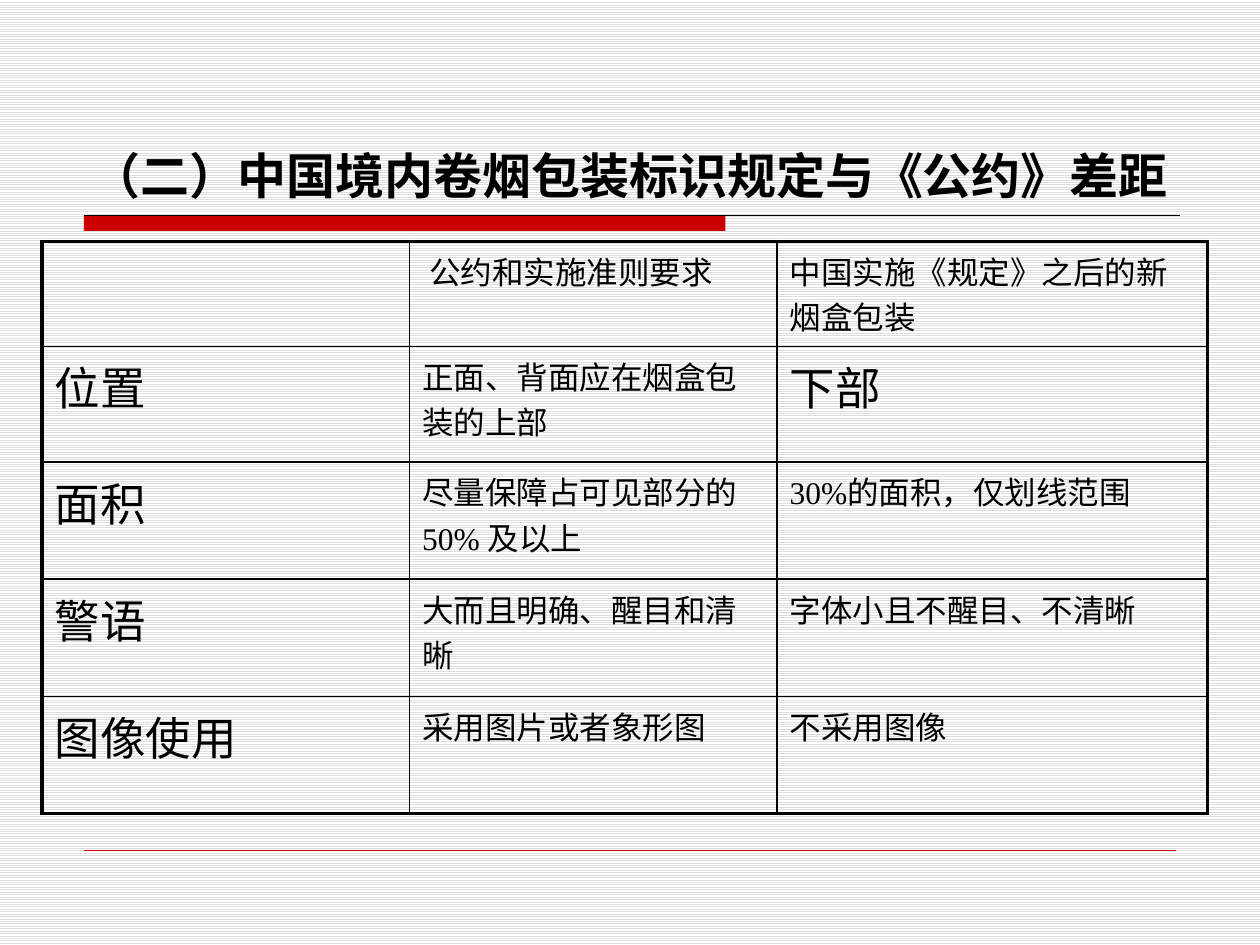
import pptx
import pptx.util
import pptx.dml.color
import pptx.enum.dml
import pptx.enum.shapes
import pptx.enum.text
import pptx.oxml
import pptx.oxml.ns

Pt = pptx.util.Pt
INK, RED = "000000", "CC0000"
BODY = {"name": "Times New Roman", "size": Pt(18), "bold": False}
LABEL = {"name": "DejaVu Sans", "size": Pt(26), "bold": False}
TITLE = {"name": "DejaVu Sans", "size": Pt(28), "bold": True}
ROWS = [
    ("", " 公约和实施准则要求", "中国实施《规定》之后的新烟盒包装"),
    ("位置", "正面、背面应在烟盒包装的上部", "下部"),
    ("面积", "尽量保障占可见部分的50% 及以上", "30%的面积，仅划线范围"),
    ("警语", "大而且明确、醒目和清晰", "字体小且不醒目、不清晰"),
    ("图像使用", "采用图片或者象形图", "不采用图像"),
]
LABEL_CELLS = {(1, 0), (1, 2), (2, 0), (3, 0), (4, 0)}
COLUMN_WIDTHS = [210, 210, 246]
ROW_HEIGHTS = [60, 66, 67, 67, 67]


def rgb(value):
    """Return the colour for a hex string."""
    return pptx.dml.color.RGBColor.from_string(value)


def write(p, text, style):
    """Add one formatted run to a paragraph."""
    r = p.add_run()
    r.text = text
    for key, value in style.items():
        setattr(r.font, key, value)
    r.font.color.rgb = rgb(INK)


def add_rule(s, x, y, width, color, weight):
    """Draw a horizontal rule without shadow."""
    line = s.shapes.add_connector(
        pptx.enum.shapes.MSO_CONNECTOR.STRAIGHT, Pt(x), Pt(y), Pt(x + width), Pt(y))
    line.line.color.rgb = rgb(color)
    line.line.width = Pt(weight)
    pptx.oxml.ns.qn("a:effectLst")
    line._element.spPr.append(pptx.oxml.parse_xml(
        f"<a:effectLst {pptx.oxml.ns.nsdecls('a')}/>"))


def add_background(s):
    """Fill the background with light horizontal stripes."""
    fill = s.background.fill
    fill.patterned()
    fill.pattern = pptx.enum.dml.MSO_PATTERN.LIGHT_HORIZONTAL
    fill.fore_color.rgb = rgb("DDDDDD")
    fill.back_color.rgb = rgb("FFFFFF")


def add_title(s, x, y, width, height):
    """Place the title at the bottom of its box."""
    tf = s.shapes.add_textbox(Pt(x), Pt(y), Pt(width), Pt(height)).text_frame
    settings = {"word_wrap": True, "margin_right": 0,
                "vertical_anchor": pptx.enum.text.MSO_ANCHOR.BOTTOM}
    for key, value in settings.items():
        setattr(tf, key, value)
    write(tf.paragraphs[0], "（二）中国境内卷烟包装标识规定与《公约》差距", TITLE)


def add_title_bar(s, x, y, width, height):
    """Draw the red bar and the thin rule along its top."""
    bar = s.shapes.add_shape(
        pptx.enum.shapes.MSO_SHAPE.RECTANGLE, Pt(x), Pt(y), Pt(width * 0.585), Pt(height))
    bar.shadow.inherit = False
    bar.fill.solid()
    bar.fill.fore_color.rgb = rgb(RED)
    bar.line.fill.background()
    add_rule(s, x, y, width, INK, 0.75)


def set_borders(cell, weights):
    """Give each side of a cell a solid line of its own weight."""
    tc_pr = cell._tc.get_or_add_tcPr()
    for i, (side, weight) in enumerate(weights.items()):
        tc_pr.insert(i, pptx.oxml.parse_xml(
            f'<a:{side} {pptx.oxml.ns.nsdecls("a")} w="{Pt(weight)}">'
            f'<a:solidFill><a:srgbClr val="{INK}"/></a:solidFill></a:{side}>'))


def add_comparison(s, x, y):
    """Build the comparison table with a heavy outer frame."""
    last_row, last_col = len(ROW_HEIGHTS) - 1, len(COLUMN_WIDTHS) - 1
    table = s.shapes.add_table(
        len(ROW_HEIGHTS), len(COLUMN_WIDTHS), Pt(x), Pt(y),
        Pt(sum(COLUMN_WIDTHS)), Pt(sum(ROW_HEIGHTS))).table
    table.first_row = table.horz_banding = False
    for column, width in zip(table.columns, COLUMN_WIDTHS):
        column.width = Pt(width)
    for row, height in zip(table.rows, ROW_HEIGHTS):
        row.height = Pt(height)
    for i, texts in enumerate(ROWS):
        for j, text in enumerate(texts):
            cell = table.cell(i, j)
            cell.fill.background()
            outer = {"lnL": j == 0, "lnR": j == last_col,
                     "lnT": i == 0, "lnB": i == last_row}
            set_borders(cell, {side: 2.25 if edge else 1 for side, edge in outer.items()})
            if text:
                style = LABEL if (i, j) in LABEL_CELLS else BODY
                p = cell.text_frame.paragraphs[0]
                p.space_before = Pt(style["size"].pt * 0.2)
                write(p, text, style)


def main():
    """Build and save the slide."""
    prs = pptx.Presentation()
    prs.slide_width, prs.slide_height = Pt(720), Pt(540)
    s = prs.slides.add_slide(prs.slide_layouts[6])
    add_background(s)
    add_title_bar(s, 48, 123, 626.5, 9)
    add_rule(s, 48, 486, 624, RED, 0.25)
    add_title(s, 45, 24, 630, 96)
    add_comparison(s, 24, 138)
    prs.save("out.pptx")


if __name__ == "__main__":
    main()
